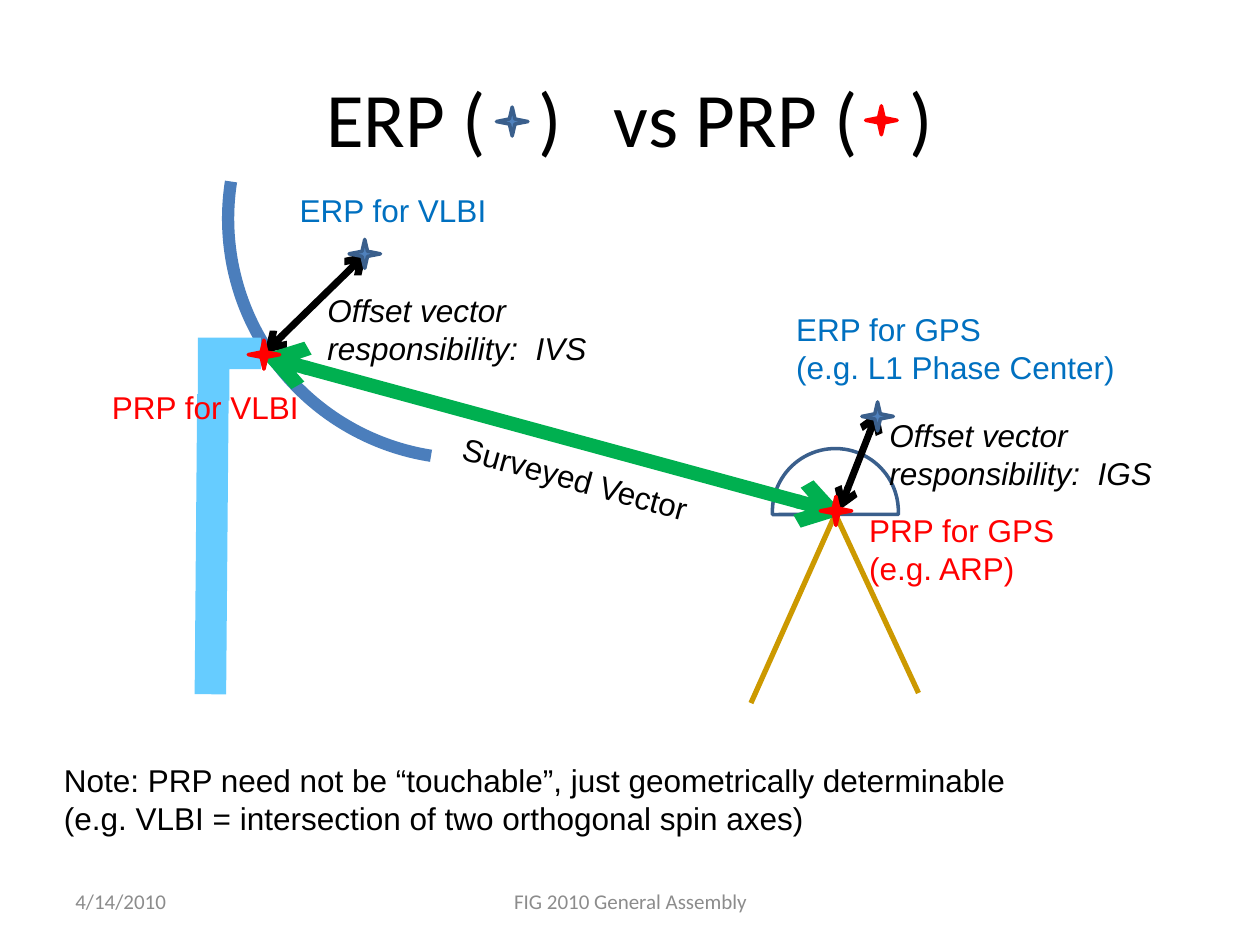
from lxml import etree
from pptx import Presentation
from pptx.dml.color import RGBColor
from pptx.enum.shapes import MSO_CONNECTOR, MSO_SHAPE
from pptx.enum.text import MSO_ANCHOR, MSO_AUTO_SIZE, PP_ALIGN
from pptx.oxml.ns import qn
from pptx.util import Inches, Pt

STRAIGHT = MSO_CONNECTOR.STRAIGHT
ARC, CHORD = MSO_SHAPE.ARC, MSO_SHAPE.CHORD
CORNER, STAR = MSO_SHAPE.CORNER, MSO_SHAPE.STAR_4_POINT
LEFT, CENTER = PP_ALIGN.LEFT, PP_ALIGN.CENTER
TOP, MIDDLE = MSO_ANCHOR.TOP, MSO_ANCHOR.MIDDLE
FIT_TEXT, NO_FIT = MSO_AUTO_SIZE.SHAPE_TO_FIT_TEXT, MSO_AUTO_SIZE.NONE

BLACK, GREY, RED, BLUE = "000000", "8C8C8C", "FF0000", "0070C0"
STAR_BLUE, OUTLINE, DISH = "4F81BD", "3A5F8C", "4B7EBC"
MOUNT, TRIPOD, GREEN = "66CCFF", "CC9900", "00B050"


def color(hex_code):
    return RGBColor.from_string(hex_code)


class Diagram:
    """Draws styled elements on the current page."""

    heading_font = "Calibri"
    label_font = "Arial"
    label_size = 18
    star_width, star_height = 0.25, 0.23

    def __init__(self, page):
        self.page = page

    def _text(self, frame, lines, font, size, ink, align=LEFT, italic=False):
        for index, line in enumerate(lines):
            para = frame.paragraphs[0] if index == 0 else frame.add_paragraph()
            para.alignment = align
            span = para.add_run()
            span.text = line
            span.font.name = font
            span.font.size = Pt(size)
            span.font.italic = italic
            span.font.color.rgb = color(ink)

    def _box(self, left, top, width, height, anchor, wrap, fit):
        box = self.page.shapes.add_textbox(
            Inches(left), Inches(top), Inches(width), Inches(height))
        box.text_frame.word_wrap = wrap
        box.text_frame.auto_size = fit
        box.text_frame.vertical_anchor = anchor
        return box

    def heading(self, text, left, top, width, height, size, ink, align=CENTER):
        box = self._box(left, top, width, height, MIDDLE, True, NO_FIT)
        self._text(box.text_frame, [text], self.heading_font, size, ink, align)

    def label(self, lines, left, top, width, ink=BLACK, italic=False, rotation=0):
        height = 0.4 if len(lines) == 1 else 0.71
        box = self._box(left, top, width, height, TOP, False, FIT_TEXT)
        box.rotation = rotation
        self._text(box.text_frame, lines, self.label_font, self.label_size,
                   ink, italic=italic)

    def shape(self, kind, left, top, width, height, fill=None, line=None,
              weight=2, rotation=0, adjustments=()):
        shape = self.page.shapes.add_shape(
            kind, Inches(left), Inches(top), Inches(width), Inches(height))
        shape.shadow.inherit = False
        shape.rotation = rotation
        for index, value in enumerate(adjustments):
            shape.adjustments[index] = value
        if fill:
            shape.fill.solid()
            shape.fill.fore_color.rgb = color(fill)
        else:
            shape.fill.background()
        if line:
            shape.line.color.rgb = color(line)
            shape.line.width = Pt(weight)
        else:
            shape.line.fill.background()

    def star(self, left, top, fill, line):
        self.shape(STAR, left, top, self.star_width, self.star_height, fill, line)

    def erp_star(self, left, top):
        self.star(left, top, STAR_BLUE, OUTLINE)

    def prp_star(self, left, top):
        self.star(left, top, RED, RED)

    def line(self, start, end, ink, weight, arrows=False):
        connector = self.page.shapes.add_connector(
            STRAIGHT, *(Inches(value) for value in (*start, *end)))
        connector.line.color.rgb = color(ink)
        connector.line.width = Pt(weight)
        properties = connector._element.spPr
        if arrows:
            outline = properties.find(qn("a:ln"))
            for tag in ("a:headEnd", "a:tailEnd"):
                etree.SubElement(outline, qn(tag), type="arrow")
        etree.SubElement(properties, qn("a:effectLst"))


def main():
    deck = Presentation()
    deck.slide_width, deck.slide_height = Inches(10), Inches(7.5)
    diagram = Diagram(deck.slides.add_slide(deck.slide_layouts[6]))

    diagram.heading("ERP (   )   vs PRP (   )", 0.5, 0.3, 9, 1.25, 44, BLACK)
    diagram.heading("4/14/2010", 0.5, 6.95, 2.33, 0.4, 12, GREY, LEFT)
    diagram.heading("FIG 2010 General Assembly", 3.42, 6.95, 3.17, 0.4, 12, GREY)

    # VLBI dish, GPS antenna and their supports
    diagram.shape(ARC, 1.81, -0.17, 3.81, 3.81, line=DISH, weight=7, rotation=188.9)
    diagram.shape(CHORD, 6.13, 3.56, 1, 1, line=OUTLINE, rotation=132.3,
                  adjustments=(27, 138.2))
    diagram.line((1.69, 3.13), (1.67, 5.51), MOUNT, 18)
    for foot in ((7.29, 5.5), (5.96, 5.58)):
        diagram.line((6.63, 4.08), foot, TRIPOD, 3)
    diagram.shape(CORNER, 1.57, 2.68, 0.5, 0.5, fill=MOUNT, rotation=90)

    # Offset and surveyed vectors, with the title's two symbols
    diagram.line((2.91, 2.01), (2.1, 2.8), BLACK, 4, arrows=True)
    diagram.erp_star(3.94, 0.85)
    diagram.prp_star(6.87, 0.84)
    diagram.line((6.7, 4.08), (2.07, 2.82), GREEN, 8, arrows=True)
    diagram.line((6.97, 3.26), (6.66, 4.05), BLACK, 4, arrows=True)

    diagram.label(["ERP for VLBI"], 2.28, 1.47, 1.7, BLUE)
    diagram.label(["ERP for GPS", "(e.g. L1 Phase Center)"], 6.22, 2.41, 2.75, BLUE)
    diagram.label(["PRP for VLBI"], 0.79, 3.03, 1.7, RED)
    diagram.label(["PRP for GPS", "(e.g. ARP)"], 6.8, 4.01, 1.68, RED)
    for service, left, top, width in (("IVS", 2.5, 2.26, 2.28),
                                      ("IGS", 6.96, 3.25, 2.31)):
        diagram.label(["Offset vector", f"responsibility:  {service}"],
                      left, top, width, italic=True)
    diagram.label(["Surveyed Vector"], 3.55, 3.6, 2.05, rotation=15.3)

    diagram.prp_star(1.97, 2.7)
    diagram.erp_star(2.77, 1.9)
    diagram.erp_star(6.84, 3.19)
    diagram.prp_star(6.51, 3.94)

    diagram.label(["Note: PRP need not be “touchable”, just geometrically determinable",
                   "(e.g. VLBI = intersection of two orthogonal spin axes)"],
                  0.41, 5.99, 7.74)

    deck.save("out.pptx")


if __name__ == "__main__":
    main()
